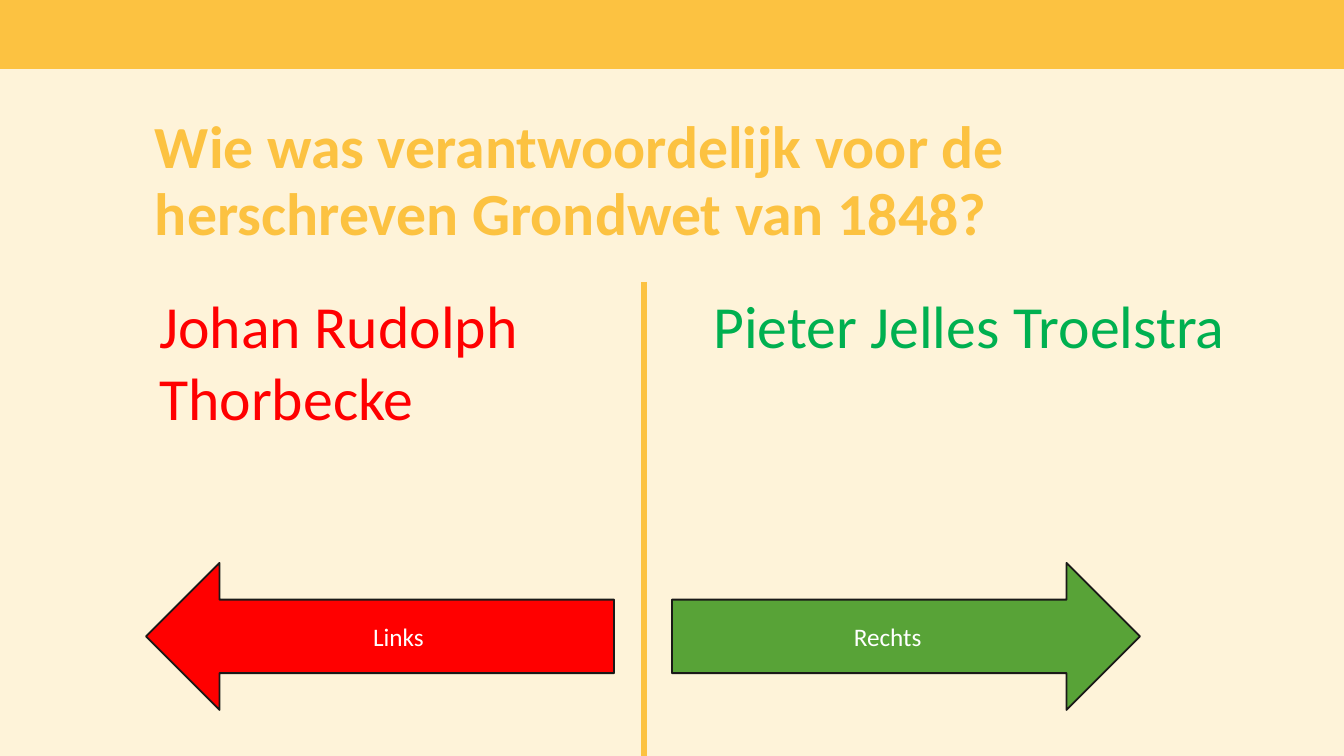
from dataclasses import dataclass

from lxml import etree
from pptx import Presentation
from pptx.dml.color import RGBColor
from pptx.enum.shapes import MSO_CONNECTOR, MSO_SHAPE
from pptx.enum.text import MSO_ANCHOR, MSO_AUTO_SIZE, PP_ALIGN
from pptx.oxml.ns import qn
from pptx.util import Pt

RECT, LEFT_ARROW, RIGHT_ARROW = MSO_SHAPE.RECTANGLE, MSO_SHAPE.LEFT_ARROW, MSO_SHAPE.RIGHT_ARROW
STRAIGHT = MSO_CONNECTOR.STRAIGHT
TOP, MIDDLE = MSO_ANCHOR.TOP, MSO_ANCHOR.MIDDLE
LEFT, CENTER = PP_ALIGN.LEFT, PP_ALIGN.CENTER
NO_FIT = MSO_AUTO_SIZE.NONE
WIDTH, HEIGHT = 1344, 756
SCALE = 9144000 / WIDTH
TITLE_ONLY = 5


@dataclass(frozen=True)
class Theme:
    """Colours, font and type sizes of the quiz."""
    font: str = "Calibri"
    background: str = "FEF3D9"
    accent: str = "FCC241"
    left_answer: str = "FF0000"
    right_answer: str = "00B050"
    left_arrow: str = "FF0000"
    right_arrow: str = "58A337"
    outline: str = "1A1918"
    label: str = "FFFFFF"
    heading_size: float = 32
    label_size: float = 13.5
    title_leading: float = 36
    divider_width: float = 3
    outline_width: float = 1


def px(length):
    """Convert pixels to EMU."""
    return round(length * SCALE)


def apply_format(target, values):
    """Set each attribute in values on target."""
    for name, value in values.items():
        setattr(target, name, value)


class QuizSlide:
    """Draws quiz elements on one slide in one theme."""

    def __init__(self, slide, theme):
        """Keep the slide and theme and paint the background."""
        self.slide, self.theme = slide, theme
        fill = slide.background.fill
        fill.solid()
        fill.fore_color.rgb = RGBColor.from_string(theme.background)

    def set_text(self, shape, text, size, color, bold=False, align=LEFT, leading=None, **frame_format):
        """Put one formatted paragraph in a shape."""
        frame = shape.text_frame
        apply_format(frame, {"word_wrap": True, "auto_size": NO_FIT, **frame_format})
        paragraph = frame.paragraphs[0]
        paragraph.text = text
        paragraph.alignment = align
        if leading:
            paragraph.line_spacing = Pt(leading)
        font = paragraph.runs[0].font
        apply_format(font, {"name": self.theme.font, "size": Pt(size), "bold": bold})
        font.color.rgb = RGBColor.from_string(color)

    def title(self, text, left, top, width, height):
        """Place the question in the title placeholder."""
        question = self.slide.shapes.title
        apply_format(question, {"left": px(left), "top": px(top), "width": px(width), "height": px(height)})
        self.set_text(question, text, self.theme.heading_size, self.theme.accent, bold=True,
                      leading=self.theme.title_leading, vertical_anchor=TOP,
                      margin_left=0, margin_top=px(7), margin_right=0, margin_bottom=0)

    def answer(self, text, color, *box):
        """Add an answer in its own colour."""
        answer = self.slide.shapes.add_textbox(*map(px, box))
        self.set_text(answer, text, self.theme.heading_size, color)

    def shape(self, kind, color, *box):
        """Add a filled preset shape without outline or shadow."""
        shape = self.slide.shapes.add_shape(kind, *map(px, box))
        shape.shadow.inherit = False
        shape.fill.solid()
        shape.fill.fore_color.rgb = RGBColor.from_string(color)
        shape.line.fill.background()
        return shape

    def arrow(self, kind, text, color, *box):
        """Add an outlined block arrow with a centred label."""
        arrow = self.shape(kind, color, *box)
        arrow.line.color.rgb = RGBColor.from_string(self.theme.outline)
        arrow.line.width = Pt(self.theme.outline_width)
        self.set_text(arrow, text, self.theme.label_size, self.theme.label,
                      align=CENTER, vertical_anchor=MIDDLE)

    def divider(self, x, top, bottom):
        """Add the vertical line between the answers."""
        divider = self.slide.shapes.add_connector(STRAIGHT, px(x), px(top), px(x), px(bottom))
        divider.line.color.rgb = RGBColor.from_string(self.theme.accent)
        divider.line.width = Pt(self.theme.divider_width)
        etree.SubElement(divider._element.spPr, qn("a:effectLst"))


def main():
    """Build the quiz slide and save it."""
    deck = Presentation()
    deck.slide_width, deck.slide_height = px(WIDTH), px(HEIGHT)
    theme = Theme()
    quiz = QuizSlide(deck.slides.add_slide(deck.slide_layouts[TITLE_ONLY]), theme)
    answer_top, arrow_top, arrow_width, arrow_height = 282, 563, 468, 147

    quiz.shape(RECT, theme.accent, 0, 0, WIDTH, 69)
    quiz.title("Wie was verantwoordelijk voor de herschreven Grondwet van 1848?", 155, 106, 962, 132)
    quiz.divider(644, answer_top, HEIGHT)
    quiz.answer("Johan Rudolph Thorbecke", theme.left_answer, 146, answer_top, 396, 159)
    quiz.answer("Pieter Jelles Troelstra", theme.right_answer, 700, answer_top, 560, 86)
    for kind, label, color, left in (
        (LEFT_ARROW, "Links", theme.left_arrow, 146),
        (RIGHT_ARROW, "Rechts", theme.right_arrow, 672),
    ):
        quiz.arrow(kind, label, color, left, arrow_top, arrow_width, arrow_height)
    deck.save("out.pptx")


if __name__ == "__main__":
    main()
